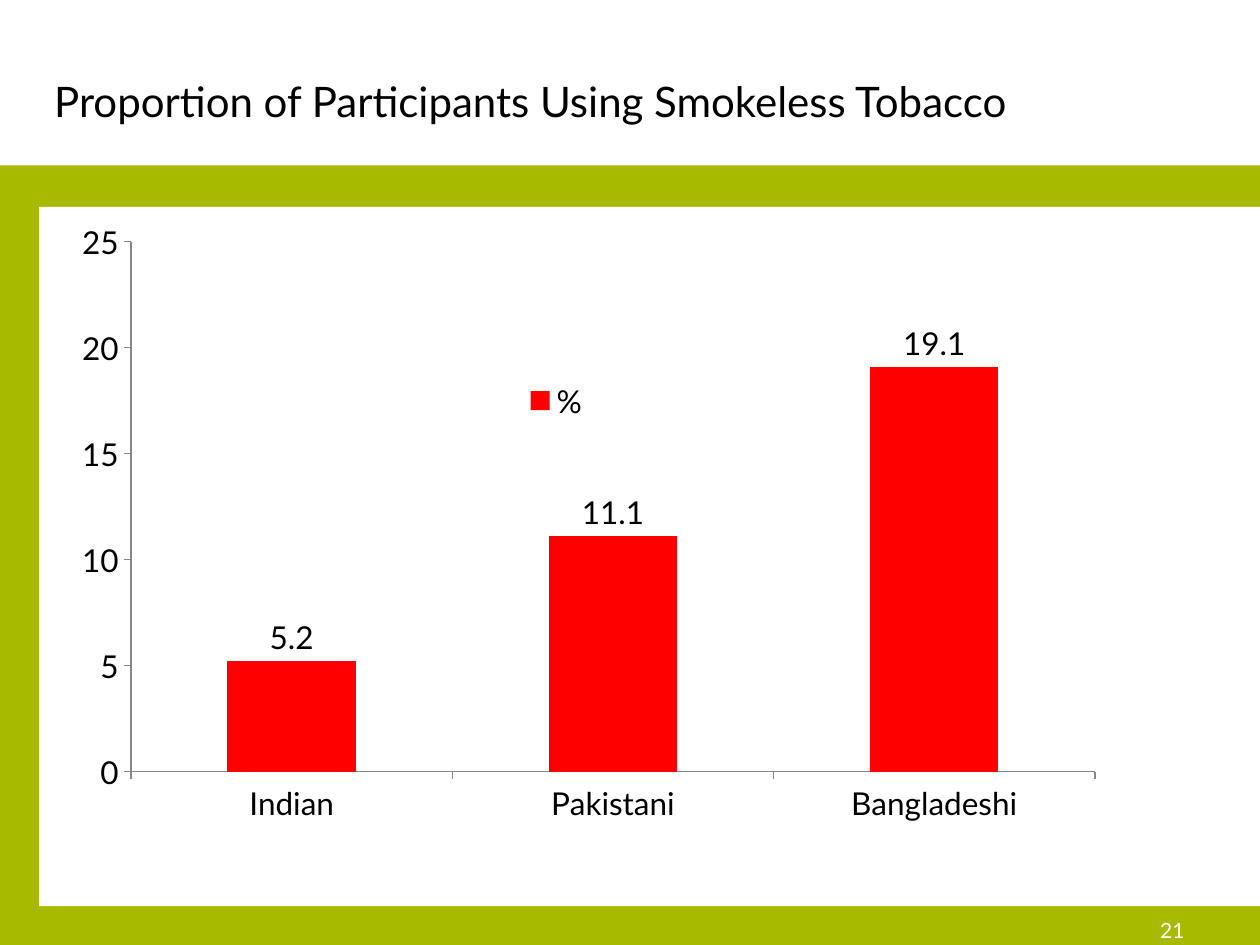
import pptx
import pptx.chart.data
import pptx.dml.color
import pptx.enum.chart
import pptx.enum.shapes
import pptx.enum.text
import pptx.oxml
import pptx.oxml.ns
import pptx.util

COLORS = {"green": "A8BA00", "white": "FFFFFF", "black": "000000",
          "bar": "FF0000", "axis": "868686"}
RGB = {name: pptx.dml.color.RGBColor.from_string(c) for name, c in COLORS.items()}
ANCHOR = pptx.enum.text.MSO_ANCHOR
ALIGN = pptx.enum.text.PP_ALIGN

prs = pptx.Presentation()
prs.slide_width = W = pptx.util.Inches(10)
prs.slide_height = H = pptx.util.Inches(7.5)
s = prs.slides.add_slide(prs.slide_layouts[5])


def share(x, y, w, h):
    """Turn percentages of the slide's size into a box."""
    return [int(v * side / 100) for v, side in zip((x, y, w, h), (W, H, W, H))]


def set_layout(parent, index, **shares):
    """Place a chart part by shares of the chart's size."""
    for old in parent.findall(pptx.oxml.ns.qn("c:layout")):
        parent.remove(old)
    target = '<c:layoutTarget val="inner"/>' if index == 0 else ""
    modes = "".join(f'<c:{k}Mode val="edge"/>' for k in "xy")
    values = "".join(f'<c:{k} val="{v}"/>' for k, v in shares.items())
    parent.insert(index, pptx.oxml.parse_xml(
        f'<c:layout {pptx.oxml.ns.nsdecls("c")}><c:manualLayout>'
        f"{target}{modes}{values}</c:manualLayout></c:layout>"))


# Green frame with a white panel
for color, box in (("green", (0, 17.5, 100, 82.5)), ("white", (3.1, 21.9, 96.9, 74))):
    sp = s.shapes.add_shape(pptx.enum.shapes.MSO_SHAPE.RECTANGLE, *share(*box))
    sp.shadow.inherit = False
    sp.fill.solid()
    sp.fill.fore_color.rgb = RGB[color]
    sp.line.fill.background()

# Title and slide number
title = s.shapes.title
title.left, title.top, title.width, title.height = share(3.3, 4, 79.2, 13.33)
number = s.shapes.add_textbox(*share(71.7, 95.73, 23.3, 5.33))
for sp, text, size, color, align in (
        (title, "Proportion of Participants Using Smokeless Tobacco", 24, "black", ALIGN.LEFT),
        (number, "21", 12, "white", ALIGN.RIGHT)):
    tf = sp.text_frame
    tf.word_wrap = True
    tf.vertical_anchor = ANCHOR.MIDDLE
    p = tf.paragraphs[0]
    p.alignment = align
    r = p.add_run()
    r.text = text
    for key, value in {"name": "Lato", "size": pptx.util.Pt(size)}.items():
        setattr(r.font, key, value)
    r.font.color.rgb = RGB[color]

# Column chart
data = pptx.chart.data.CategoryChartData(number_format="0.0")
data.categories = ["Indian", "Pakistani", "Bangladeshi"]
data.add_series("%", (5.2, 11.1, 19.1))
chart = s.shapes.add_chart(pptx.enum.chart.XL_CHART_TYPE.COLUMN_CLUSTERED,
                           *share(5, 22.27, 90, 66), data).chart
chart.has_title = False
chart.font.name = "Lato"
chart.font.size = pptx.util.Pt(18)
chart.font.color.rgb = RGB["black"]

value_format = {"minimum_scale": 0, "maximum_scale": 25, "major_unit": 5}
for key, value in value_format.items():
    setattr(chart.value_axis, key, value)
chart.value_axis.tick_labels.number_format = "0"
chart.value_axis.tick_labels.number_format_is_linked = False
for axis in (chart.category_axis, chart.value_axis):
    axis.has_major_gridlines = False
    axis.major_tick_mark = pptx.enum.chart.XL_TICK_MARK.OUTSIDE
    axis.minor_tick_mark = pptx.enum.chart.XL_TICK_MARK.NONE
    axis.format.line.color.rgb = RGB["axis"]
    axis.format.line.width = pptx.util.Pt(0.75)

plot = chart.plots[0]
plot.gap_width = 150
plot.vary_by_categories = False
fill = plot.series[0].format.fill
fill.solid()
fill.fore_color.rgb = RGB["bar"]
plot.has_data_labels = True
labels = plot.data_labels
labels.show_value = True
labels.position = pptx.enum.chart.XL_LABEL_POSITION.OUTSIDE_END

chart.has_legend = True
chart.legend.position = pptx.enum.chart.XL_LEGEND_POSITION.RIGHT
chart.legend.include_in_layout = False
plot_area = chart.value_axis._element.getparent()
set_layout(plot_area, 0, x=0.06, y=0.05, w=0.85, h=0.85)
set_layout(chart.legend._element, 1, x=0.4, y=0.26, w=0.07, h=0.09)

prs.save("out.pptx")
